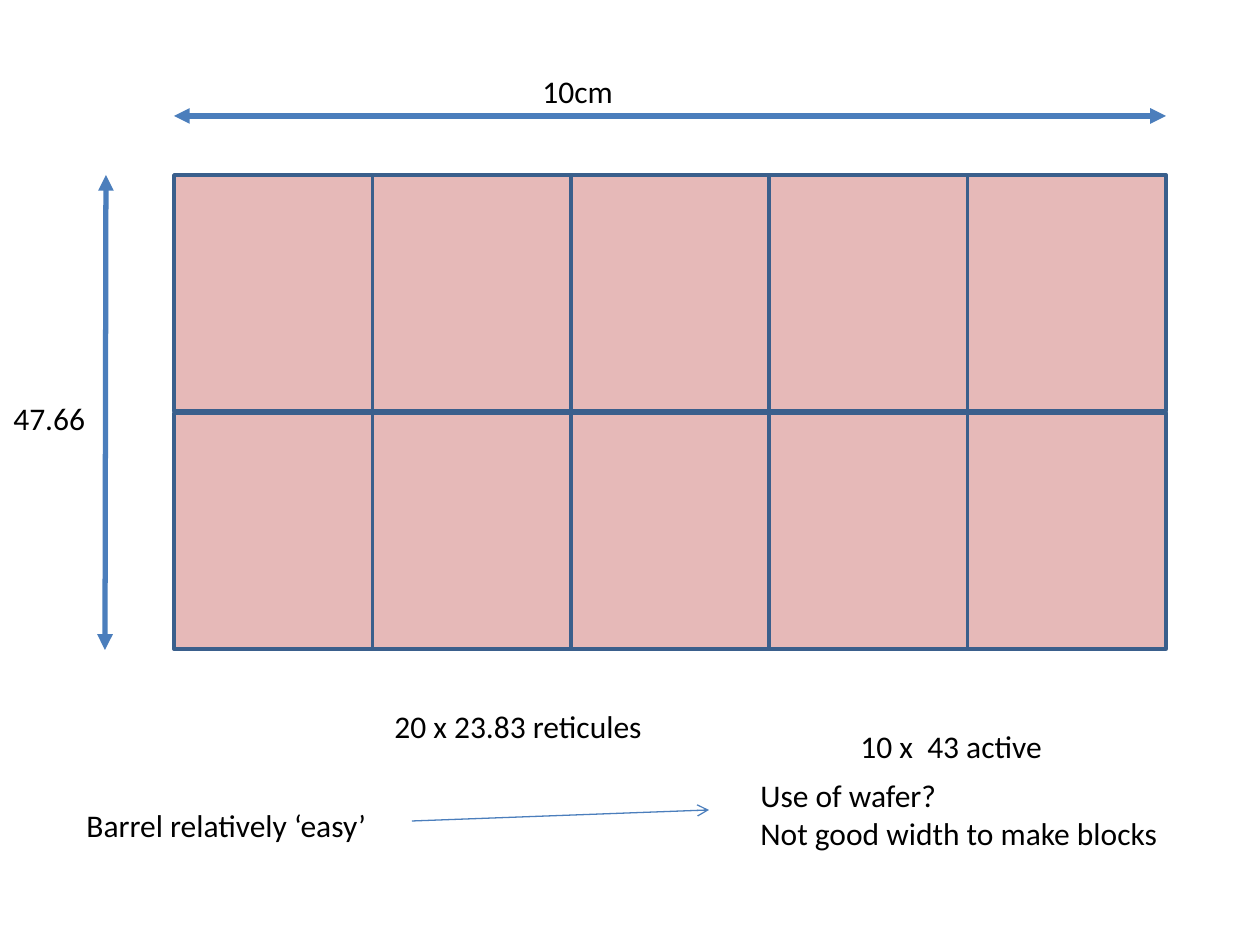
from lxml.etree import SubElement
from pptx import Presentation
from pptx.dml.color import RGBColor
from pptx.enum.shapes import MSO_CONNECTOR, MSO_SHAPE
from pptx.enum.text import MSO_AUTO_SIZE
from pptx.oxml.ns import qn
from pptx.util import Emu, Pt

SCALE = 914400 / 126
PINK, EDGE, BLUE, BLACK = "E6B9B8", "3A5F8C", "4B7EBC", "000000"


def px(n):
    return Emu(round(n * SCALE))


def paint(fmt, color):
    fmt.solid()
    fmt.fore_color.rgb = RGBColor.from_string(color)


def cell(group, x, y, w, h):
    rect = group.shapes.add_shape(MSO_SHAPE.RECTANGLE, px(x), px(y), px(w), px(h))
    rect.shadow.inherit = False
    paint(rect.fill, PINK)
    paint(rect.line.fill, EDGE)
    rect.line.width = Pt(2)


def arrow(slide, start, end, width, head=None, tail=None):
    line = slide.shapes.add_connector(
        MSO_CONNECTOR.STRAIGHT, *(px(n) for n in start + end))
    paint(line.line.fill, BLUE)
    line.line.width = Pt(width)
    ln = line.line._get_or_add_ln()
    for tag, kind in (("a:headEnd", head), ("a:tailEnd", tail)):
        if kind:
            SubElement(ln, qn(tag), type=kind)
    SubElement(line._element.spPr, qn("a:effectLst"))


def label(slide, box, *lines):
    frame = slide.shapes.add_textbox(*(px(n) for n in box)).text_frame
    frame.word_wrap = False
    frame.auto_size = MSO_AUTO_SIZE.SHAPE_TO_FIT_TEXT
    for i, text in enumerate(lines):
        para = frame.add_paragraph() if i else frame.paragraphs[0]
        run = para.add_run()
        run.text = text
        run.font.name = "Calibri"
        run.font.size = Pt(18)
        paint(run.font.fill, BLACK)


def wafer(slide, x, y, w, h, rows=2, cols=5, gap=2):
    """Grid of reticules, one group per row."""
    wide, high = w / cols, (h - gap * (rows - 1)) / rows
    for row in range(rows):
        group = slide.shapes.add_group_shape()
        for col in range(cols):
            cell(group, x + col * wide, y + row * (high + gap), wide, high)


def sizes(slide, x, y, w, h):
    """Dimension arrows and labels around the wafer."""
    both = {"head": "triangle", "tail": "triangle"}
    arrow(slide, (x, y - 59), (x + w, y - 59), 3, **both)
    label(slide, (x + 356, y - 109, 97, 50), "10cm")
    arrow(slide, (x - 68, y), (x - 69, y + h + 1), 3, **both)
    label(slide, (x - 173, y + 218, 98, 50), "47.66")


def notes(slide, x, y):
    """Remarks below the wafer."""
    label(slide, (x + 308, y, 276, 50), "20 x 23.83 reticules")
    label(slide, (x + 774, y + 20, 209, 50), "10 x  43 active")
    label(slide, (x + 674, y + 69, 427, 89),
          "Use of wafer?", "Not good width to make blocks")
    label(slide, (x, y + 99, 306, 50), "Barrel relatively ‘easy’")
    arrow(slide, (x + 338, y + 120), (x + 635, y + 109), 0.75, tail="arrow")


def main():
    deck = Presentation()
    deck.slide_width, deck.slide_height = px(1260), px(945)
    slide = deck.slides.add_slide(deck.slide_layouts[6])
    box = (174, 175, 992, 474)
    wafer(slide, *box)
    sizes(slide, *box)
    notes(slide, 74, 701)
    deck.save("out.pptx")


if __name__ == "__main__":
    main()
